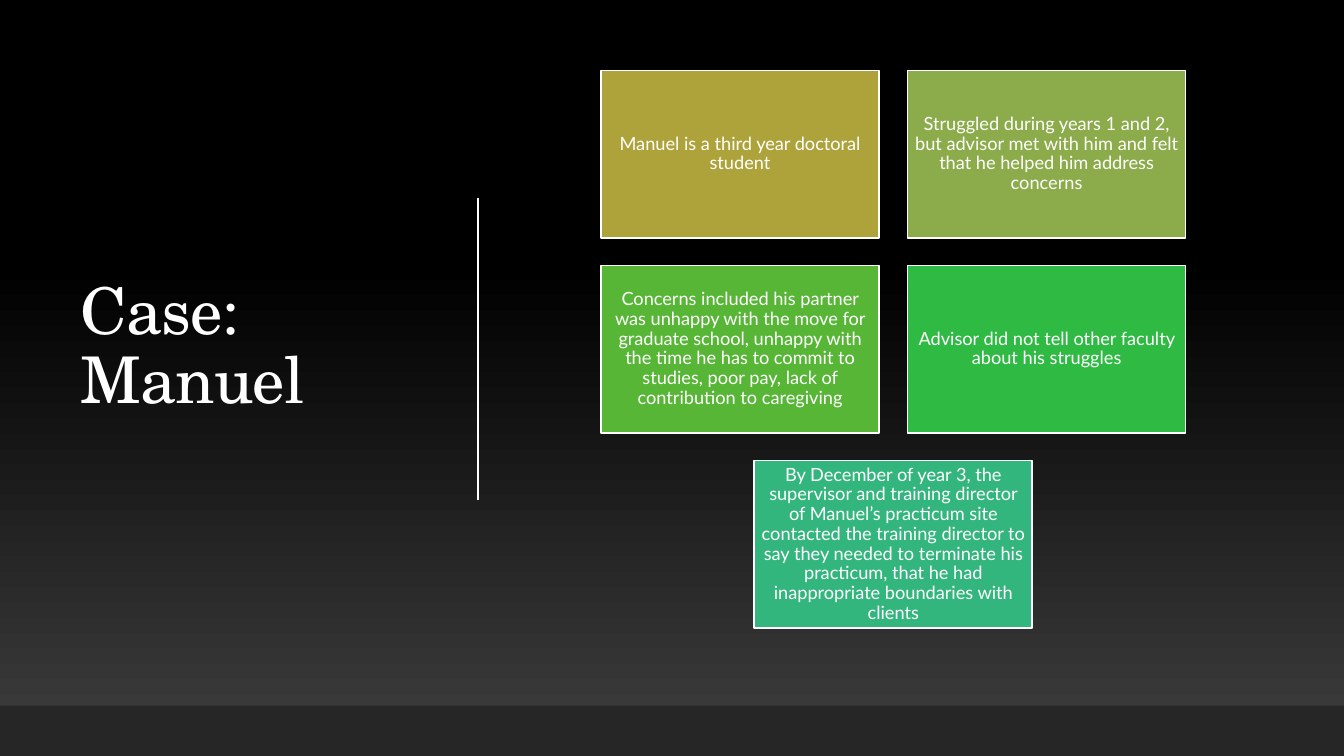
from pptx import Presentation
from pptx import util as u
from pptx.dml.color import RGBColor
from pptx.enum import shapes, text
from pptx.oxml import ns
from lxml import etree

WHITE = RGBColor(0xFF, 0xFF, 0xFF)
BLACK = RGBColor(0x00, 0x00, 0x00)
CHARCOAL = RGBColor(0x3F, 0x3F, 0x3F)
FOOTER_GREY = RGBColor(0x26, 0x26, 0x26)
OLIVE = RGBColor(0xAE, 0xA3, 0x3A)
MOSS = RGBColor(0x8C, 0xAB, 0x4A)
LEAF = RGBColor(0x57, 0xB6, 0x36)
GREEN = RGBColor(0x2E, 0xBA, 0x43)
TEAL = RGBColor(0x33, 0xB6, 0x7D)

CARD_WIDTH, CARD_HEIGHT = 2.76, 1.66
CARDS_LEFT, CARDS_TOP = 5.96, 0.7
COLUMN_STEP, ROW_STEP = 3.04, 1.935

TITLE_FONT = {"name": "TeX Gyre Schola", "size": u.Pt(46)}
CARD_FONT = {"name": "Lato", "size": u.Pt(13)}
CARD_FRAME = {
    "margin_left": u.Inches(0.05),
    "margin_right": u.Inches(0.05),
    "margin_top": u.Inches(0.05),
    "margin_bottom": u.Inches(0.05),
}

CASE_FACTS = [
    (0, 0, OLIVE, "Manuel is a third year doctoral student"),
    (1, 0, MOSS, "Struggled during years 1 and 2, but advisor met with him "
                 "and felt that he helped him address concerns"),
    (0, 1, LEAF, "Concerns included his partner was unhappy with the move for "
                 "graduate school, unhappy with the time he has to commit to "
                 "studies, poor pay, lack of contribution to caregiving"),
    (1, 1, GREEN, "Advisor did not tell other faculty about his struggles"),
    (0.5, 2, TEAL, "By December of year 3, the supervisor and training director "
                   "of Manuel’s practicum site contacted the training director "
                   "to say they needed to terminate his practicum, that he had "
                   "inappropriate boundaries with clients"),
]


def write(holder, words, font_format, frame_format, alignment):
    frame = holder.text_frame
    frame.word_wrap = True
    frame.vertical_anchor = text.MSO_ANCHOR.MIDDLE
    for attribute, value in frame_format.items():
        setattr(frame, attribute, value)
    paragraph = frame.paragraphs[0]
    paragraph.alignment = alignment
    paragraph.line_spacing = 0.9
    run = paragraph.add_run()
    run.text = words
    run.font.color.rgb = WHITE
    for attribute, value in font_format.items():
        setattr(run.font, attribute, value)
    return run


def add_block(left, top, width, height, colour):
    block = slide.shapes.add_shape(
        shapes.MSO_SHAPE.RECTANGLE,
        u.Inches(left), u.Inches(top), u.Inches(width), u.Inches(height))
    block.shadow.inherit = False
    block.fill.solid()
    block.fill.fore_color.rgb = colour
    block.line.fill.background()
    return block


deck = Presentation()
deck.slide_width = u.Inches(13.33)
deck.slide_height = u.Inches(7.5)
slide = deck.slides.add_slide(deck.slide_layouts[6])

backdrop = slide.background.fill
backdrop.gradient()
backdrop.gradient_angle = 90
for stop, (position, colour) in zip(backdrop.gradient_stops, [(0, CHARCOAL), (0.65, BLACK)]):
    stop.position = position
    stop.color.rgb = colour

title = slide.shapes.add_textbox(u.Inches(0.7), u.Inches(0.69), u.Inches(3.69), u.Inches(5.53))
title_run = write(title, "Case: Manuel", TITLE_FONT, {}, text.PP_ALIGN.LEFT)
title_run.font._element.set("spc", "-50")

divider = slide.shapes.add_connector(
    shapes.MSO_CONNECTOR.STRAIGHT,
    u.Inches(4.74), u.Inches(1.96), u.Inches(4.74), u.Inches(4.96))
divider.line.color.rgb = WHITE
divider.line.width = u.Pt(1)
etree.SubElement(divider._element.spPr, ns.qn("a:effectLst"))

add_block(0, 7, 13.33, 0.5, FOOTER_GREY)

for column, row, colour, fact in CASE_FACTS:
    card = add_block(CARDS_LEFT + column * COLUMN_STEP, CARDS_TOP + row * ROW_STEP,
                     CARD_WIDTH, CARD_HEIGHT, colour)
    card.line.color.rgb = WHITE
    card.line.width = u.Pt(1.25)
    write(card, fact, CARD_FONT, CARD_FRAME, text.PP_ALIGN.CENTER)

deck.save("out.pptx")
